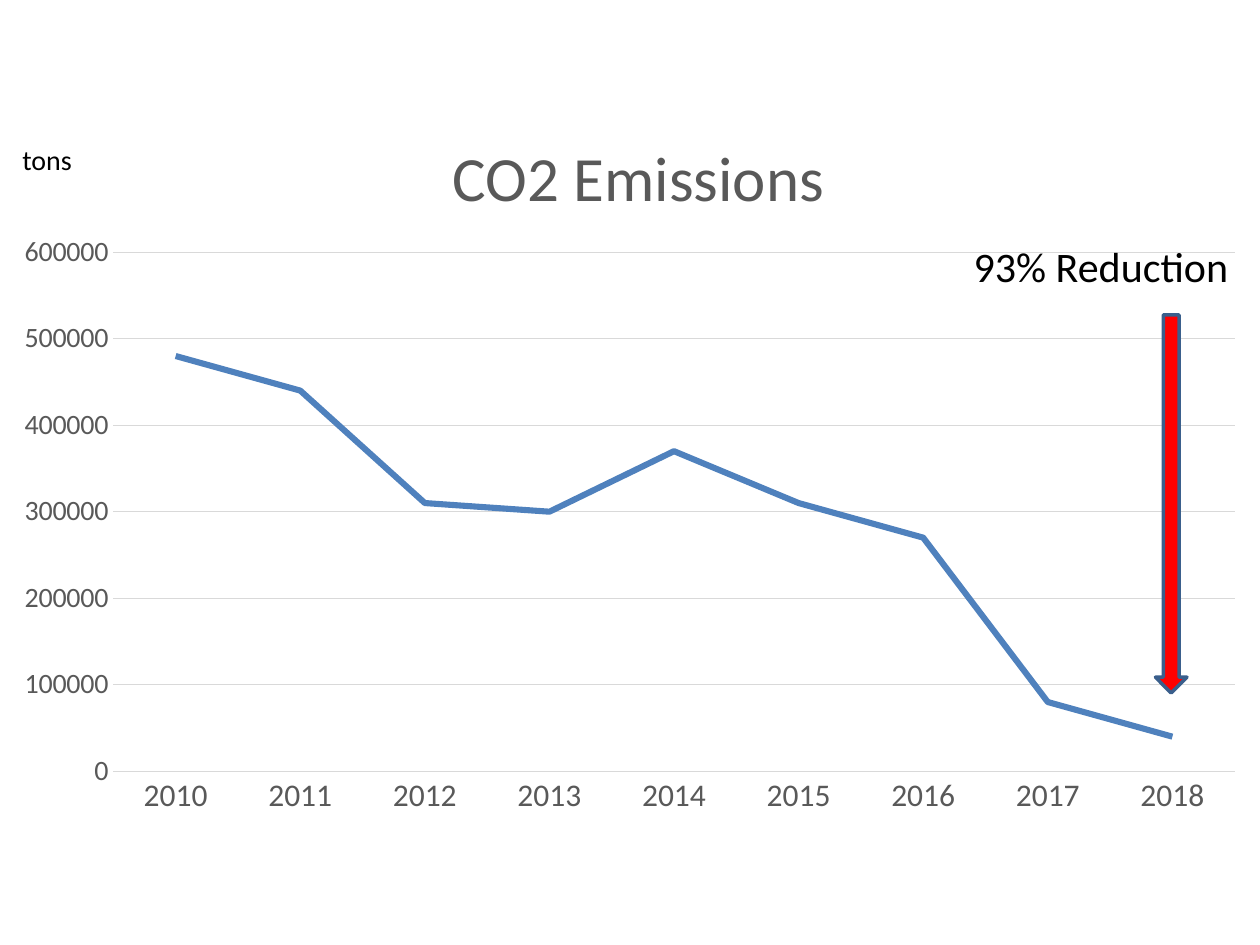
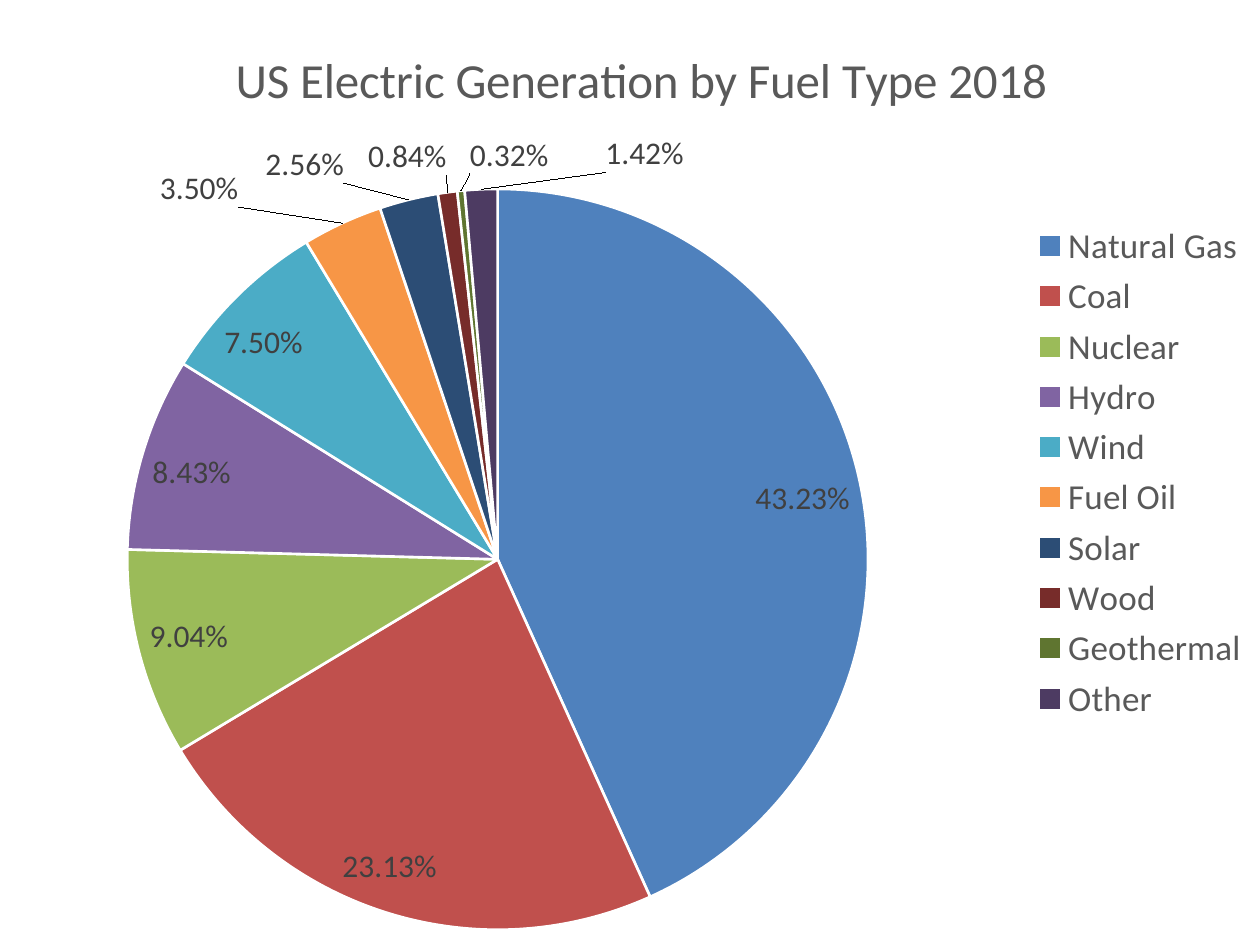
"""Build two chart slides: the fall in CO2 emissions and electric generation by fuel type."""
from dataclasses import dataclass

from lxml import etree
from pptx import Presentation
from pptx.chart.data import CategoryChartData
from pptx.dml.color import RGBColor
from pptx.enum import chart as ce, shapes, text
from pptx.oxml.ns import qn
from pptx.util import Inches, Pt

EMISSIONS_TITLE = "CO2 Emissions"
EMISSIONS = {
    "2010": 480000, "2011": 440000, "2012": 310000,
    "2013": 300000, "2014": 370000, "2015": 310000,
    "2016": 270000, "2017": 80000, "2018": 40000,
}
NOTES = [
    ("93% Reduction", 24, (7.63, 1.86, 2.24, 0.5)),
    ("tons", 16, (0.08, 1.08, 0.6, 0.37)),
]
FUELS_TITLE = "US Electric Generation by Fuel Type 2018"
FUELS = [
    ("Natural Gas", 0.4323, "4F81BD"),
    ("Coal", 0.2313, "C0504D"),
    ("Nuclear", 0.0904, "9BBB59"),
    ("Hydro", 0.0843, "8064A2"),
    ("Wind", 0.075, "4BACC6"),
    ("Fuel Oil", 0.035, "F79646"),
    ("Solar", 0.0256, "2C4D75"),
    ("Wood", 0.0084, "772C2A"),
    ("Geothermal", 0.0032, "5F7530"),
    ("Other", 0.0142, "4D3B62"),
]
LABEL_SHIFTS = {
    "Fuel Oil": (-0.08, -0.01),
    "Solar": (-0.05, -0.01),
    "Wood": (0, -0.01),
    "Geothermal": (0.07, -0.01),
    "Other": (0.13, -0.01),
}


@dataclass(frozen=True)
class Theme:
    """Colours, font and type sizes shared by the slides."""
    font: str = "Calibri"
    ink: str = "000000"
    grey: str = "595959"
    label: str = "404040"
    grid: str = "D9D9D9"
    line: str = "4F81BD"
    arrow: str = "FF0000"
    arrow_edge: str = "3A5F8C"
    white: str = "FFFFFF"
    base: int = 10
    value_axis: int = 16
    category_axis: int = 18
    slice_label: int = 18
    legend: int = 20


THEME = Theme()


def style_font(font, size, color):
    """Apply the theme font with a size and colour."""
    font.name, font.size, font.bold = THEME.font, Pt(size), False
    font.color.rgb = RGBColor.from_string(color)


def style_line(line, color, width):
    """Set the colour and width of a line."""
    line.color.rgb = RGBColor.from_string(color)
    line.width = Pt(width)


def place(part, index, values, modes="", inner=False):
    """Give a chart part a manual layout; modes names the values measured from the chart edge."""
    for old in part.findall(qn("c:layout")):
        part.remove(old)
    layout = etree.Element(qn("c:layout"))
    part.insert(index, layout)
    manual = etree.SubElement(layout, qn("c:manualLayout"))
    if inner:
        etree.SubElement(manual, qn("c:layoutTarget")).set("val", "inner")
    for axis in modes:
        etree.SubElement(manual, qn(f"c:{axis}Mode")).set("val", "edge")
    for axis, value in zip("xywh", values):
        etree.SubElement(manual, qn(f"c:{axis}")).set("val", str(value))


def add_chart(slide, kind, box, shares, title, title_size, title_at, plot_box):
    """Add a titled single-series chart and return it."""
    data = CategoryChartData()
    data.categories = list(shares)
    data.add_series("Series 1", list(shares.values()))
    chart = slide.shapes.add_chart(kind, *map(Inches, box), data).chart
    style_font(chart.font, THEME.base, THEME.ink)
    chart.has_title = True
    heading = chart.chart_title.text_frame
    heading.text = title
    style_font(heading.paragraphs[0].font, title_size, THEME.grey)
    root = chart.element
    place(root.find(".//" + qn("c:title")), 1, title_at, "xy")
    place(root.find(".//" + qn("c:plotArea")), 0, plot_box, "xy", inner=True)
    return chart


def build_emissions(slide):
    """Draw the emissions line, its notes and the arrow."""
    chart = add_chart(slide, ce.XL_CHART_TYPE.LINE, (0, 0.67, 10, 5.92), EMISSIONS,
                      EMISSIONS_TITLE, 36, (0.35, 0.05), (0.09, 0.225, 0.89, 0.696))
    chart.has_legend = False
    chart.plots[0].vary_by_categories = False
    emissions = chart.plots[0].series[0]
    emissions.smooth = False
    emissions.marker.style = ce.XL_MARKER_STYLE.NONE
    style_line(emissions.format.line, THEME.line, 3.5)

    years, tons = chart.category_axis, chart.value_axis
    for axis, size in ((years, THEME.category_axis), (tons, THEME.value_axis)):
        axis.major_tick_mark = axis.minor_tick_mark = ce.XL_TICK_MARK.NONE
        style_font(axis.tick_labels.font, size, THEME.grey)
    style_line(years.format.line, THEME.grid, 0.75)
    tons.minimum_scale, tons.maximum_scale, tons.major_unit = 0, 600000, 100000
    tons.tick_labels.number_format = "0"
    tons.tick_labels.number_format_is_linked = False
    tons.format.line.fill.background()
    style_line(tons.major_gridlines.format.line, THEME.grid, 0.75)

    arrow = slide.shapes.add_shape(shapes.MSO_SHAPE.DOWN_ARROW,
                                   *map(Inches, (9.17, 2.5, 0.25, 3)))
    arrow.shadow.inherit = False
    arrow.fill.solid()
    arrow.fill.fore_color.rgb = RGBColor.from_string(THEME.arrow)
    style_line(arrow.line, THEME.arrow_edge, 2)

    for words, size, box in NOTES:
        note = slide.shapes.add_textbox(*map(Inches, box)).text_frame
        note.word_wrap = False
        note.auto_size = text.MSO_AUTO_SIZE.SHAPE_TO_FIT_TEXT
        note.text = words
        style_font(note.paragraphs[0].font, size, THEME.ink)


def build_fuels(slide):
    """Draw the pie of fuel types with its labels and legend."""
    chart = add_chart(slide, ce.XL_CHART_TYPE.PIE, (0, 0, 10, 7.5),
                      {fuel: share for fuel, share, _ in FUELS},
                      FUELS_TITLE, 28, (0.18, 0.04), (0.101, 0.2, 0.588, 0.784))
    chart.plots[0].vary_by_categories = True
    chart.has_legend = True
    chart.legend.position = ce.XL_LEGEND_POSITION.RIGHT
    chart.legend.include_in_layout = False
    style_font(chart.legend.font, THEME.legend, THEME.grey)
    place(chart.element.find(".//" + qn("c:legend")), 1, (0.815, 0.23, 0.18, 0.54), "xy")

    generation = chart.plots[0].series[0]
    labels = generation.data_labels
    labels.show_value = True
    labels.number_format, labels.number_format_is_linked = "0.00%", False
    labels.position = ce.XL_LABEL_POSITION.BEST_FIT
    style_font(labels.font, THEME.slice_label, THEME.label)

    for index, (fuel, _, color) in enumerate(FUELS):
        point = generation.points[index]
        point.format.fill.solid()
        point.format.fill.fore_color.rgb = RGBColor.from_string(color)
        style_line(point.format.line, THEME.white, 1.5)
        if fuel in LABEL_SHIFTS:
            style_font(point.data_label.font, THEME.slice_label, THEME.label)
            point.data_label.position = ce.XL_LABEL_POSITION.OUTSIDE_END

    for label, shift in zip(chart.element.iter(qn("c:dLbl")), LABEL_SHIFTS.values()):
        place(label, 1, shift)
        number = etree.Element(qn("c:numFmt"), formatCode="0.00%", sourceLinked="0")
        label.insert(2, number)


def main():
    """Build and save the deck."""
    deck = Presentation()
    deck.slide_width, deck.slide_height = Inches(10), Inches(7.5)
    for build in (build_emissions, build_fuels):
        build(deck.slides.add_slide(deck.slide_layouts[6]))
    deck.save("out.pptx")


if __name__ == "__main__":
    main()
